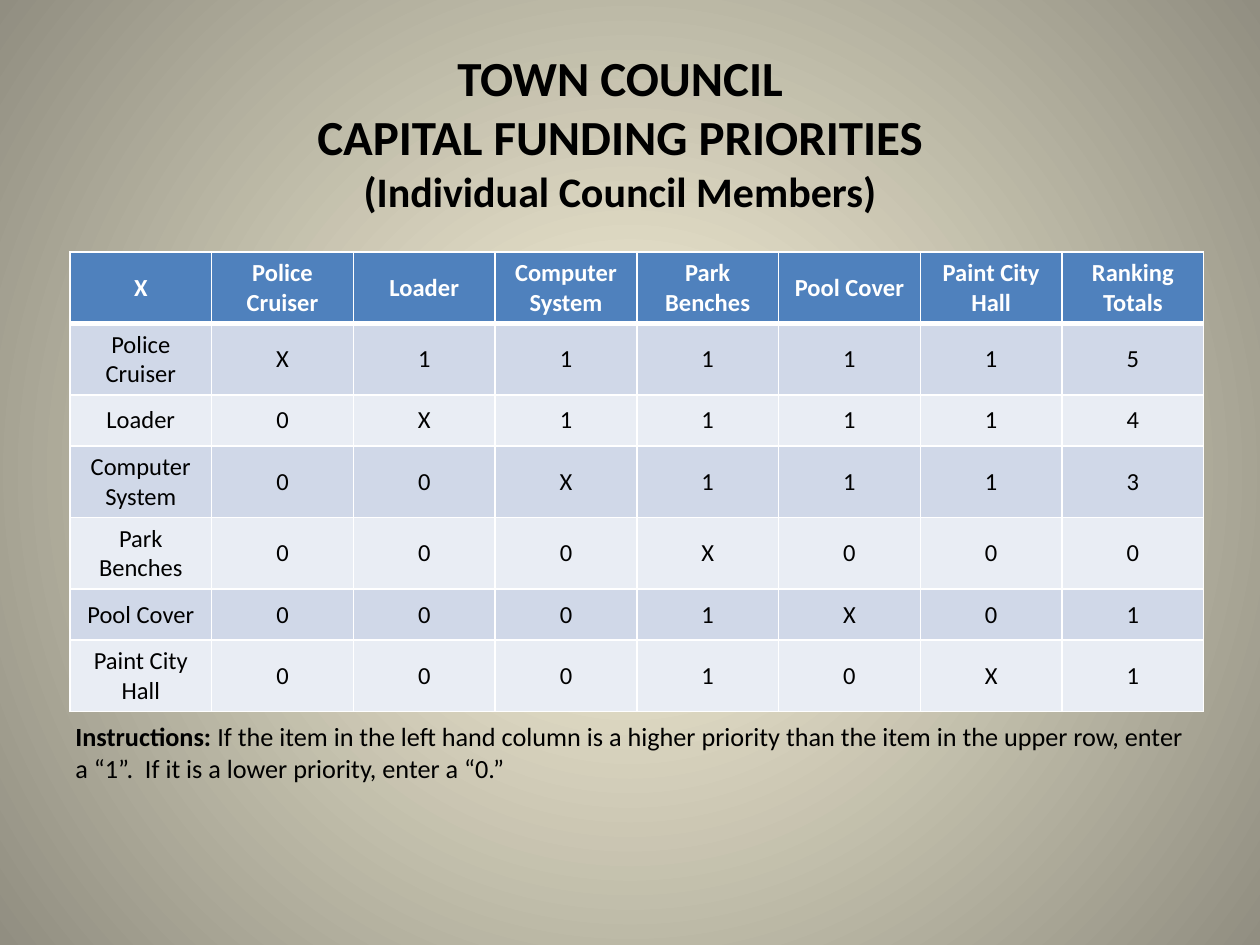
from dataclasses import dataclass

from lxml.etree import SubElement
from pptx import Presentation
from pptx.dml.color import RGBColor
from pptx.enum.text import MSO_ANCHOR, PP_ALIGN
from pptx.oxml.ns import qn
from pptx.slide import Slide
from pptx.table import _Cell
from pptx.text.text import TextFrame, _Paragraph
from pptx.util import Cm, Pt

FONT = "Calibri"
BLACK = "000000"
WHITE = "FFFFFF"
HEADER_BLUE = "4F81BD"
BANDS = ("D0D8E8", "E9EDF4")
BACKGROUND = ("FCF7DD", "918E81")


@dataclass(frozen=True)
class Project:
    name: str
    scores: str  # one mark per rival project, X against itself

    @property
    def total(self) -> int:
        return self.scores.count("1")


PROJECTS = (
    Project("Police Cruiser", "X11111"),
    Project("Loader", "0X1111"),
    Project("Computer System", "00X111"),
    Project("Park Benches", "000X00"),
    Project("Pool Cover", "0001X0"),
    Project("Paint City Hall", "00010X"),
)


def color(hex_value: str) -> RGBColor:
    return RGBColor.from_string(hex_value)


def add_text(paragraph: _Paragraph, text: str, *, size: float,
             bold: bool = False, hex_color: str = BLACK) -> None:
    run = paragraph.add_run()
    run.text = text
    run.font.name = FONT
    run.font.size = Pt(size)
    run.font.bold = bold
    run.font.color.rgb = color(hex_color)


def paint_background(slide: Slide) -> None:
    """Fill the slide with a circular gradient, light in the centre."""
    fill = slide.background.fill
    fill.gradient()
    for stop, position, hex_color in zip(fill.gradient_stops, (0, 1), BACKGROUND):
        stop.position = position
        stop.color.rgb = color(hex_color)
    linear = slide.element.find(".//" + qn("a:lin"))
    gradient = linear.getparent()
    gradient.remove(linear)
    circle = SubElement(gradient, qn("a:path"), {"path": "circle"})
    SubElement(circle, qn("a:fillToRect"), {side: "50000" for side in "ltrb"})


def add_text_frame(slide: Slide, left: Cm, top: Cm, width: Cm, height: Cm) -> TextFrame:
    frame = slide.shapes.add_textbox(left, top, width, height).text_frame
    frame.word_wrap = True
    return frame


def add_title(slide: Slide) -> None:
    frame = add_text_frame(slide, Cm(1.07), Cm(1.07), Cm(22.86), Cm(3.18))
    frame.vertical_anchor = MSO_ANCHOR.MIDDLE
    paragraph = frame.paragraphs[0]
    paragraph.alignment = PP_ALIGN.CENTER
    for line in ("TOWN COUNCIL", "CAPITAL FUNDING PRIORITIES"):
        add_text(paragraph, line, size=28, bold=True)
        paragraph.add_line_break()
    add_text(paragraph, "(Individual Council Members)", size=24, bold=True)


def set_borders(cell: _Cell, top: float, bottom: float) -> None:
    """Draw white borders, one point wide at the sides."""
    properties = cell._tc.get_or_add_tcPr()
    widths = {"a:lnL": 1, "a:lnR": 1, "a:lnT": top, "a:lnB": bottom}
    for index, (tag, width) in enumerate(widths.items()):
        line = SubElement(properties, qn(tag), {"w": str(Pt(width))})
        fill = SubElement(line, qn("a:solidFill"))
        SubElement(fill, qn("a:srgbClr"), {"val": WHITE})
        properties.insert(index, line)


def fill_cell(cell: _Cell, text: str, row: int) -> None:
    is_header = row == 0
    cell.fill.solid()
    cell.fill.fore_color.rgb = color(HEADER_BLUE if is_header else BANDS[(row - 1) % 2])
    set_borders(cell, top=3 if row == 1 else 1, bottom=3 if is_header else 1)
    cell.vertical_anchor = MSO_ANCHOR.MIDDLE
    paragraph = cell.text_frame.paragraphs[0]
    paragraph.alignment = PP_ALIGN.CENTER
    add_text(paragraph, text, size=14, bold=is_header,
             hex_color=WHITE if is_header else BLACK)


def add_priority_table(slide: Slide) -> None:
    header = ["X", *(project.name for project in PROJECTS), "Ranking Totals"]
    body = [[project.name, *project.scores, str(project.total)] for project in PROJECTS]
    rows = [header, *body]
    row_height = Cm(1.03)
    table = slide.shapes.add_table(
        len(rows), len(header), Cm(1.41), Cm(5.08), Cm(22.86), row_height * len(rows)
    ).table
    for row, texts in enumerate(rows):
        table.rows[row].height = row_height
        for column, text in enumerate(texts):
            fill_cell(table.cell(row, column), text, row)


def add_instructions(slide: Slide) -> None:
    frame = add_text_frame(slide, Cm(1.27), Cm(14.4), Cm(23.09), Cm(1.27))
    paragraph = frame.paragraphs[0]
    add_text(paragraph, "Instructions: ", size=15, bold=True)
    add_text(
        paragraph,
        "If the item in the left hand column is a higher priority than the item "
        "in the upper row, enter a “1”.  If it is a lower priority, enter a “0.”",
        size=15,
    )


def main() -> None:
    presentation = Presentation()
    presentation.slide_width = Cm(25.4)
    presentation.slide_height = Cm(19.05)
    slide = presentation.slides.add_slide(presentation.slide_layouts[6])
    paint_background(slide)
    add_title(slide)
    add_priority_table(slide)
    add_instructions(slide)
    presentation.save("out.pptx")


if __name__ == "__main__":
    main()
